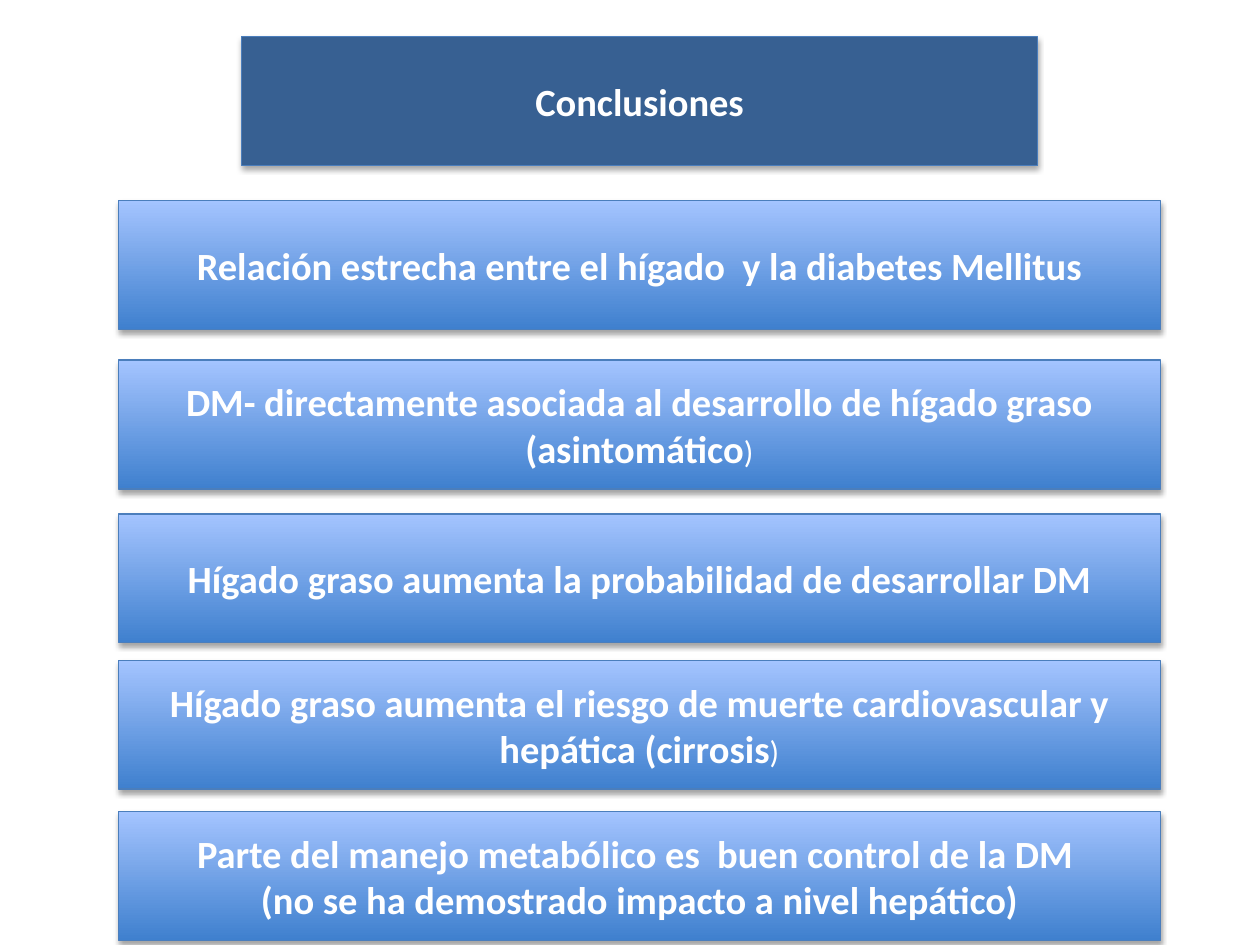
"""Build the conclusions slide about the liver and diabetes."""
from lxml import etree
from pptx import Presentation
from pptx.dml.color import RGBColor
from pptx.enum import shapes, text
from pptx.oxml import ns
from pptx.util import Cm, Pt

WHITE = RGBColor(0xFF, 0xFF, 0xFF)
NAVY = RGBColor(0x37, 0x60, 0x92)
OUTLINE = RGBColor(0x4B, 0x7E, 0xBC)
DARK_BLUE = RGBColor(0x3F, 0x80, 0xCE)
LIGHT_BLUE = RGBColor(0xA4, 0xC4, 0xFF)

BOX_HEIGHT = Cm(2.6)
CONCLUSIONS = [
    (4.04, [["Relación estrecha entre el hígado  y la diabetes Mellitus"]]),
    (7.26, [["DM- directamente asociada al desarrollo de hígado graso (asintomático", ")"]]),
    (10.36, [["Hígado graso aumenta la probabilidad de desarrollar DM"]]),
    (13.31, [["Hígado graso aumenta el riesgo de muerte cardiovascular y hepática (cirrosis", ")"]]),
    (16.36, [["Parte del manejo metabólico es  buen control de la DM "],
             ["(no se ha demostrado impacto a nivel hepático)"]]),
]


def add_shadow(shape):
    """Give the shape a soft shadow that falls straight down."""
    shape.shadow.inherit = False
    effects = shape._element.spPr.find(ns.qn("a:effectLst"))
    shadow = etree.SubElement(
        effects, ns.qn("a:outerShdw"), blurRad=str(Pt(3.1)), dist=str(Pt(1.8)),
        dir="5400000", rotWithShape="0")
    color = etree.SubElement(shadow, ns.qn("a:srgbClr"), val="000000")
    etree.SubElement(color, ns.qn("a:alpha"), val="35000")


def style_outline(shape):
    """Set the thin outline and the shadow shared by all boxes."""
    shape.line.color.rgb = OUTLINE
    shape.line.width = Pt(0.75)
    add_shadow(shape)


def fill_gradient(shape):
    """Fill the shape from dark blue at the bottom to light blue on top."""
    shape.fill.gradient()
    shape.fill.gradient_angle = 90
    for stop, color in zip(shape.fill.gradient_stops, (DARK_BLUE, LIGHT_BLUE)):
        stop.color.rgb = color


def write_text(shape, lines):
    """Write centred bold lines; a second run in a line is small and plain."""
    frame = shape.text_frame
    frame.word_wrap = True
    frame.auto_size = text.MSO_AUTO_SIZE.NONE
    frame.vertical_anchor = text.MSO_ANCHOR.MIDDLE
    for index, runs in enumerate(lines):
        paragraph = frame.add_paragraph() if index else frame.paragraphs[0]
        paragraph.alignment = text.PP_ALIGN.CENTER
        font = paragraph.font
        font.name, font.size, font.bold = "Calibri", Pt(22), True
        font.color.rgb = WHITE
        for position, words in enumerate(runs):
            run = paragraph.add_run()
            run.text = words
            if position:
                run.font.size, run.font.bold = Pt(18), False


def add_title(slide, title):
    """Turn the title placeholder into the navy heading box."""
    shape = slide.shapes.title
    shape.left, shape.top = Cm(4.87), Cm(0.74)
    shape.width, shape.height = Cm(16.05), BOX_HEIGHT
    shape.fill.solid()
    shape.fill.fore_color.rgb = NAVY
    style_outline(shape)
    write_text(shape, [[title]])


def add_conclusion(slide, top, lines):
    """Add one gradient box holding a conclusion."""
    shape = slide.shapes.add_shape(
        shapes.MSO_SHAPE.RECTANGLE, Cm(2.39), Cm(top), Cm(21), BOX_HEIGHT)
    fill_gradient(shape)
    style_outline(shape)
    write_text(shape, lines)


def main():
    """Create the presentation and save it."""
    presentation = Presentation()
    presentation.slide_width, presentation.slide_height = Cm(25.4), Cm(19.05)
    slide = presentation.slides.add_slide(presentation.slide_layouts[5])
    add_title(slide, "Conclusiones")
    for top, lines in CONCLUSIONS:
        add_conclusion(slide, top, lines)
    presentation.save("out.pptx")


if __name__ == "__main__":
    main()
